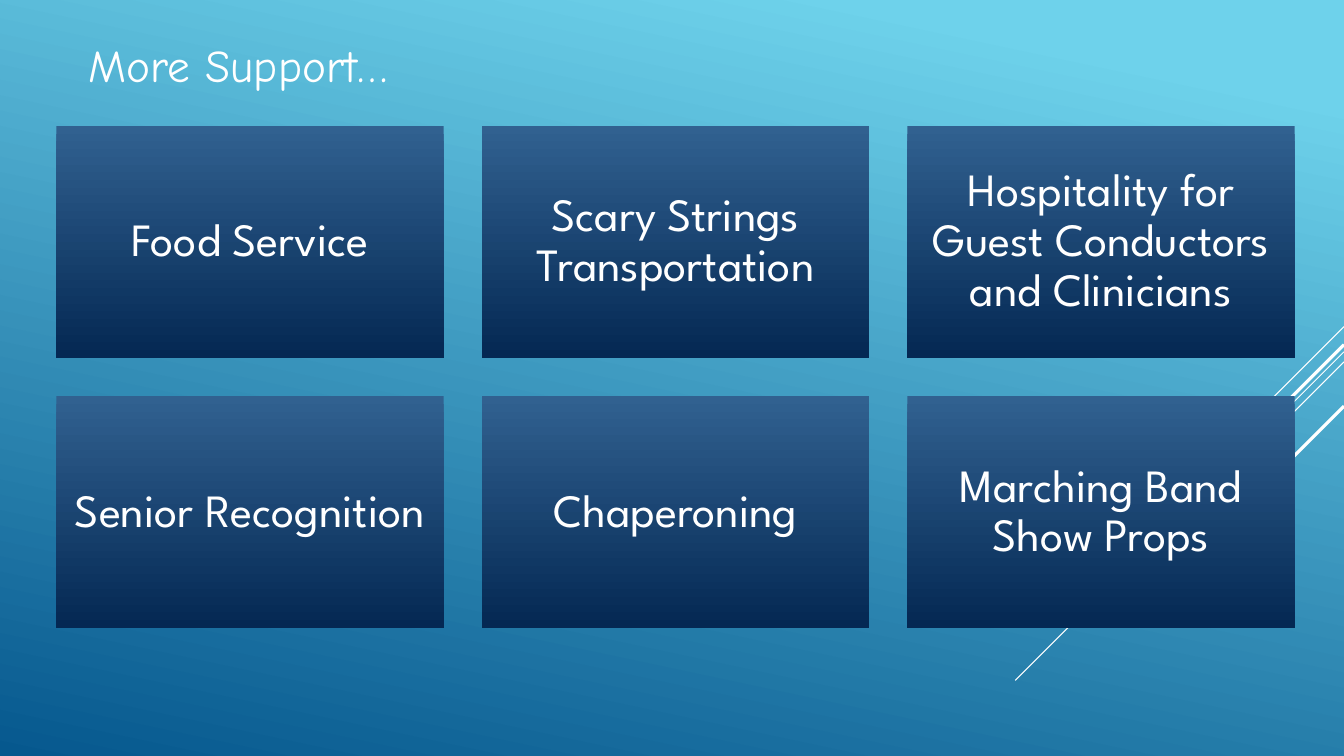
from dataclasses import dataclass

from lxml.etree import SubElement
from pptx import Presentation
from pptx.dml.color import RGBColor
from pptx.enum.shapes import MSO_CONNECTOR as Connector, MSO_SHAPE as Shape
from pptx.enum.text import MSO_ANCHOR as Anchor, PP_ALIGN as Align
from pptx.oxml.ns import qn
from pptx.util import Inches, Pt


@dataclass(frozen=True)
class Theme:
    sky: tuple = (("6ED2EB", 0.1), ("06588E", 1))
    sky_angle: int = 102
    card: tuple = (("316190", 0), ("042853", 1))
    card_angle: int = 90
    ink: str = "FFFFFF"
    title_font: str = "Comic Neue"
    title_size: float = 32.4
    card_font: str = "League Spartan"
    card_size: float = 33


THEME = Theme()
WIDTH, HEIGHT = 13.33, 7.5

# Card grid, in inches
COLUMNS = 3
GRID_LEFT, GRID_TOP = 0.56, 1.25
CARD_WIDTH, CARD_HEIGHT = 3.84, 2.3
GAP = 0.38
CARD_INSET = 0.14

SUPPORT_AREAS = [
    "Food Service",
    "Scary Strings Transportation",
    "Hospitality for Guest Conductors and Clinicians",
    "Senior Recognition",
    "Chaperoning",
    "Marching Band Show Props",
]

# Diagonal rays: height at the right edge, length across, line width
RAYS = [
    (3.24, 1.0, 0.75),
    (3.49, 3.26, 0.75),
    (3.59, 2.07, 0.75),
    (3.42, 1.91, 2.25),
    (4.03, 1.39, 2.25),
]


def paint_gradient(fill, stops, clockwise_angle):
    fill.gradient()
    fill.gradient_angle = 360 - clockwise_angle
    for stop, (color, position) in zip(fill.gradient_stops, stops):
        stop.color.rgb = RGBColor.from_string(color)
        stop.position = position


def format_text(paragraph, font_name, size, alignment):
    paragraph.alignment = alignment
    for run in paragraph.runs:
        run.font.name = font_name
        run.font.size = Pt(size)
        run.font.color.rgb = RGBColor.from_string(THEME.ink)


def add_ray(slide, edge_height, reach, line_width):
    """Draw a 45-degree line down and left from the right edge."""
    ray = slide.shapes.add_connector(
        Connector.STRAIGHT, Inches(WIDTH), Inches(edge_height),
        Inches(WIDTH - reach), Inches(edge_height + reach))
    ray.line.color.rgb = RGBColor.from_string(THEME.ink)
    ray.line.width = Pt(line_width)
    SubElement(ray._element.spPr, qn("a:effectLst"))


def set_title(slide, text):
    title = slide.shapes.title
    title.left, title.top = Inches(0.78), Inches(0.34)
    title.width, title.height = Inches(12.36), Inches(0.59)
    title.text_frame.text = text
    title.text_frame.vertical_anchor = Anchor.MIDDLE
    format_text(title.text_frame.paragraphs[0],
                THEME.title_font, THEME.title_size, Align.LEFT)


def add_card(slide, index, text):
    row, column = divmod(index, COLUMNS)
    card = slide.shapes.add_shape(
        Shape.RECTANGLE,
        Inches(GRID_LEFT + column * (CARD_WIDTH + GAP)),
        Inches(GRID_TOP + row * (CARD_HEIGHT + GAP)),
        Inches(CARD_WIDTH), Inches(CARD_HEIGHT))
    card.shadow.inherit = False
    card.line.fill.background()
    paint_gradient(card.fill, THEME.card, THEME.card_angle)

    frame = card.text_frame
    frame.text = text
    frame.word_wrap = True
    frame.vertical_anchor = Anchor.MIDDLE
    frame.margin_left = frame.margin_right = Inches(CARD_INSET)
    frame.margin_top = frame.margin_bottom = Inches(CARD_INSET)
    paragraph = frame.paragraphs[0]
    paragraph.line_spacing = 0.9
    format_text(paragraph, THEME.card_font, THEME.card_size, Align.CENTER)


def main():
    presentation = Presentation()
    presentation.slide_width = Inches(WIDTH)
    presentation.slide_height = Inches(HEIGHT)
    title_only = presentation.slide_layouts[5]
    slide = presentation.slides.add_slide(title_only)

    # Backdrop
    paint_gradient(slide.background.fill, THEME.sky, THEME.sky_angle)
    for ray in RAYS:
        add_ray(slide, *ray)

    # Content
    set_title(slide, "More Support…")
    for index, area in enumerate(SUPPORT_AREAS):
        add_card(slide, index, area)

    presentation.save("out.pptx")


if __name__ == "__main__":
    main()
